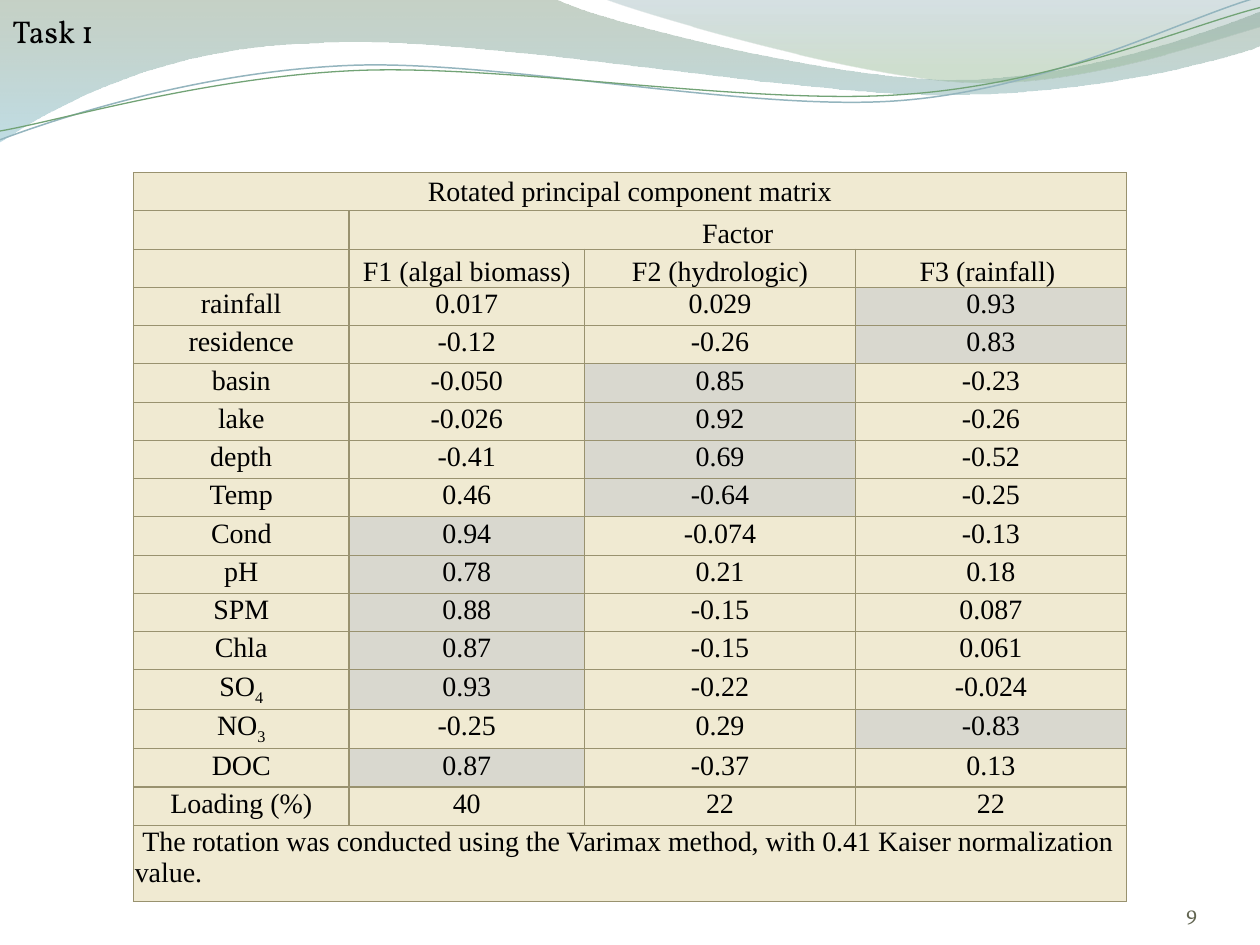
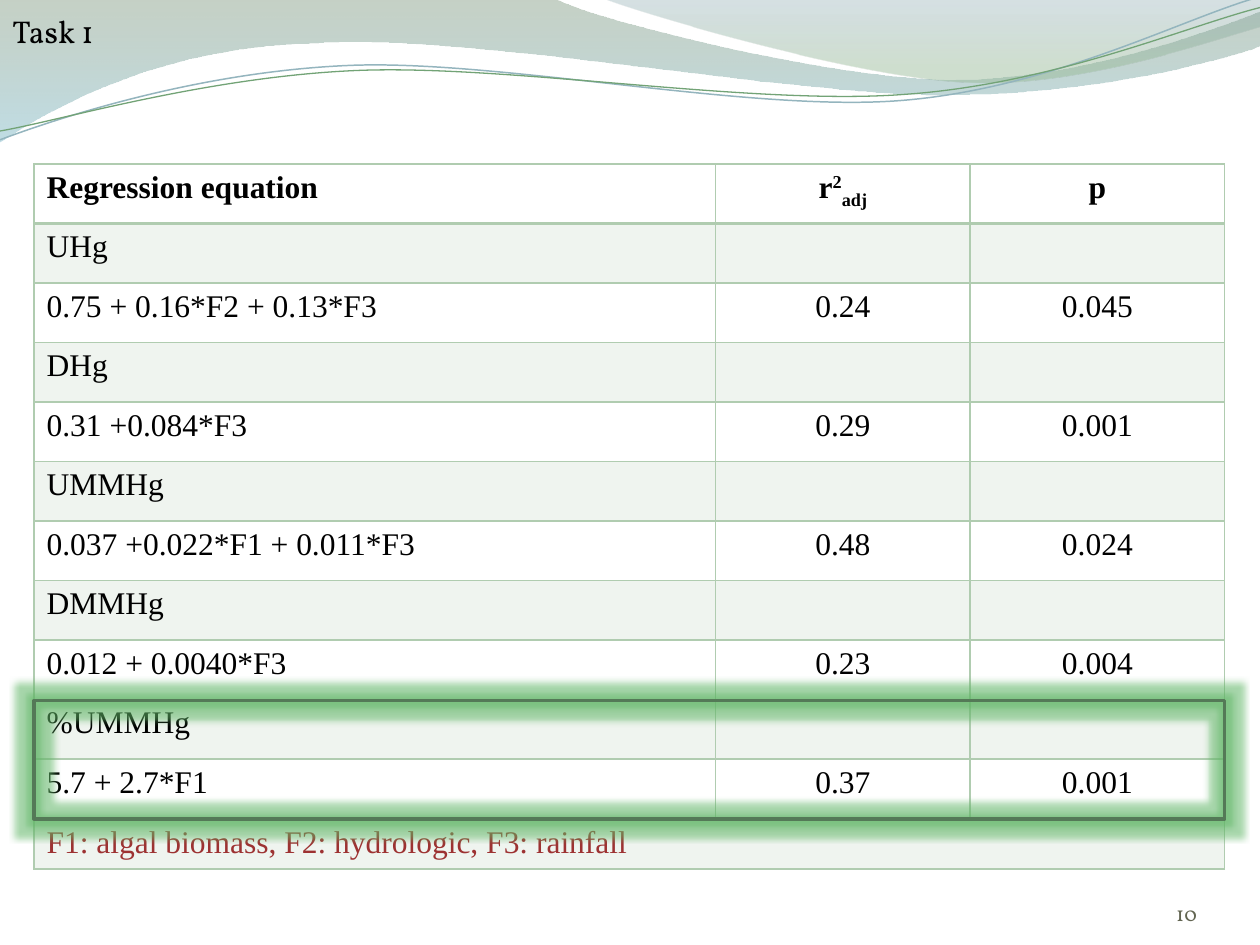
import pptx
import pptx.dml.color
import pptx.enum.shapes
import pptx.enum.text
import pptx.oxml.ns
import pptx.util
from lxml import etree

Inches = pptx.util.Inches
Pt = pptx.util.Pt
RGBColor = pptx.dml.color.RGBColor
ALIGN = pptx.enum.text.PP_ALIGN
ANCHOR = pptx.enum.text.MSO_ANCHOR
qn = pptx.oxml.ns.qn

BLACK = RGBColor(0x00, 0x00, 0x00)
NUMBER_GREY = RGBColor(0x62, 0x65, 0x51)
SAND = RGBColor(0xF0, 0xEA, 0xD2)
SAND_BORDER = RGBColor(0x99, 0x92, 0x6F)
HIGHLIGHT = RGBColor(0xD9, 0xD8, 0xCF)
MINT = RGBColor(0xB0, 0xCC, 0xB0)
NOTE_RED = RGBColor(0x9D, 0x32, 0x32)
FRAME_GREEN = RGBColor(0x54, 0x79, 0x57)
GLOW_GREEN = RGBColor(0x60, 0xB6, 0x66)
LINE_BLUE = RGBColor(0x94, 0xB5, 0xBE)
LINE_GREEN = RGBColor(0x72, 0xA3, 0x76)
SAGE = RGBColor(0x80, 0x99, 0x80)
SKY = RGBColor(0x8D, 0xC1, 0xCF)
STEEL = RGBColor(0x77, 0x9B, 0xA4)
LEAF = RGBColor(0x96, 0xB9, 0x96)

TITLE_FONT = "Vollkorn"
TABLE_FONT = "Times New Roman"
TITLE = "Task 1"

BANDS = [
    ([[(0, 0)], [(4.4, -0.01)],
      [(4.76, 0.17), (6.64, 0.63), (7.58, 0.63)],
      [(8.53, 0.63), (9.58, 0.26), (10, 0.09)], [(10.01, 0.36)],
      [(9.83, 0.44), (8.7, 0.76), (7.46, 0.75)],
      [(6.22, 0.75), (3.82, 0.28), (2.57, 0.34)],
      [(1.29, 0.36), (0.46, 0.83), (-0.01, 1.13)], [(0, 0)]],
     [(0, SAGE, 45), (1, SKY, 55)]),
    ([[(4.79, -0.01)],
      [(5.09, 0.11), (6.82, 0.62), (7.69, 0.65)],
      [(8.56, 0.69), (9.61, 0.32), (10, 0.21)], [(10, 0)], [(4.79, -0.01)]],
     [(0, STEEL, 30), (0.8, LEAF, 45)]),
]
WAVE_LINES = [
    ([[(0, 1.11)],
      [(0.48, 0.93), (1.58, 0.57), (2.77, 0.52)],
      [(3.95, 0.47), (5.93, 0.89), (7.13, 0.8)],
      [(8.33, 0.71), (9.38, 0.15), (9.98, -0.02)]], LINE_BLUE, 0.85),
    ([[(0, 1.04)],
      [(0.47, 0.96), (1.64, 0.61), (2.83, 0.56)],
      [(4.03, 0.51), (5.97, 0.84), (7.17, 0.75)],
      [(8.36, 0.67), (9.41, 0.21), (10, 0.06)]], LINE_GREEN, 0.75),
]

MATRIX_HEAD = [
    ["Rotated principal component matrix", "", "", ""],
    ["", "Factor", "", ""],
    ["", "F1 (algal biomass)", "F2 (hydrologic)", "F3 (rainfall) "],
]
LOADINGS = [
    ["rainfall", "0.017", "0.029", "0.93"],
    ["residence", "-0.12", "-0.26", "0.83"],
    ["basin", "-0.050", "0.85", "-0.23"],
    ["lake", "-0.026", "0.92", "-0.26"],
    ["depth", "-0.41", "0.69", "-0.52"],
    ["Temp", "0.46", "-0.64", "-0.25"],
    ["Cond", "0.94", "-0.074", "-0.13"],
    ["pH", "0.78", "0.21", "0.18"],
    ["SPM", "0.88", "-0.15", "0.087"],
    ["Chla", "0.87", "-0.15", "0.061"],
    [[("SO", 0), ("4", -25)], "0.93", "-0.22", "-0.024"],
    [[("NO", 0), ("3", -25)], "-0.25", "0.29", "-0.83"],
    ["DOC", "0.87", "-0.37", "0.13"],
]
MATRIX_FOOT = [
    ["Loading (%)", "40", "22", "22"],
    ["The rotation was conducted using the Varimax method, "
     "with 0.41 Kaiser normalization value.", "", "", ""],
]
STRONG_LOADING = 0.6

REGRESSION_HEAD = ["Regression equation", [("r", 0), ("2", 30), ("adj", -25)], "p"]
REGRESSIONS = [
    ("UHg", "0.75 + 0.16*F2 + 0.13*F3", "0.24", "0.045"),
    ("DHg", "0.31 +0.084*F3", "0.29", "0.001"),
    ("UMMHg", "0.037 +0.022*F1 + 0.011*F3", "0.48", "0.024"),
    ("DMMHg", "0.012 + 0.0040*F3", "0.23", "0.004"),
    ("%UMMHg", "5.7 + 2.7*F1", "0.37", "0.001"),
]
REGRESSION_NOTE = "F1: algal biomass, F2: hydrologic, F3: rainfall"


def set_alpha(color_element, percent):
    etree.SubElement(color_element, qn("a:alpha")).set("val", str(percent * 1000))


def add_outline(page, segments, close):
    ends = [tuple(map(Inches, segment[-1])) for segment in segments]
    builder = page.shapes.build_freeform(*ends[0])
    builder.add_line_segments(ends[1:], close=close)
    outline = builder.convert_to_shape()
    outline.shadow.inherit = False
    straights = list(outline._element.spPr.iter(qn("a:lnTo")))
    for straight, segment in zip(straights, segments[1:]):
        if len(segment) == 3:
            curve = etree.Element(qn("a:cubicBezTo"))
            for x, y in segment:
                point = etree.SubElement(curve, qn("a:pt"))
                point.set("x", str(Inches(x) - outline.left))
                point.set("y", str(Inches(y) - outline.top))
            straight.getparent().replace(straight, curve)
    return outline


def add_waves(page):
    for segments, stops in BANDS:
        band = add_outline(page, segments, True)
        band.line.fill.background()
        band.fill.gradient()
        band.fill.gradient_angle = 270
        for stop, (position, color, opacity) in zip(band.fill.gradient_stops, stops):
            stop.position = position
            stop.color.rgb = color
        colors = list(band._element.spPr.iter(qn("a:srgbClr")))
        for element, (position, color, opacity) in zip(colors, stops):
            set_alpha(element, opacity)
    for segments, color, width in WAVE_LINES:
        wave = add_outline(page, segments, False)
        wave.fill.background()
        wave.line.color.rgb = color
        wave.line.width = Pt(width)


def style_paragraph(para, font, size, color, align=ALIGN.LEFT, bold=False):
    para.alignment = align
    para.font.name = font
    para.font.size = Pt(size)
    para.font.color.rgb = color
    para.font.bold = bold


def add_label(page, text, place, size, color, align=ALIGN.LEFT):
    box = page.shapes.add_textbox(*map(Inches, place))
    box.text_frame.word_wrap = True
    para = box.text_frame.paragraphs[0]
    para.text = text
    style_paragraph(para, TITLE_FONT, size, color, align)
    return box.text_frame


def add_page(deck, number):
    page = deck.slides.add_slide(deck.slide_layouts[6])
    add_waves(page)
    add_label(page, TITLE, (0, 0.05, 10, 0.4), 18, BLACK)
    frame = add_label(page, str(number), (8.67, 6.95, 0.83, 0.4), 12, NUMBER_GREY, ALIGN.RIGHT)
    frame.vertical_anchor = ANCHOR.BOTTOM
    frame.margin_left = frame.margin_right = frame.margin_top = frame.margin_bottom = 0
    return page


def add_grid(page, left, top, widths, heights):
    frame = page.shapes.add_table(len(heights), len(widths), Inches(left), Inches(top),
                                  Inches(sum(widths)), Inches(sum(heights)))
    grid = frame.table
    grid.first_row = grid.horz_banding = False
    for column, width in zip(grid.columns, widths):
        column.width = Inches(width)
    for row, height in zip(grid.rows, heights):
        row.height = Inches(height)
    return grid


def write_cell(cell, content, size, align, margins, color=BLACK, bold=False):
    cell.margin_left, cell.margin_top, cell.margin_right, cell.margin_bottom = map(Inches, margins)
    para = cell.text_frame.paragraphs[0]
    style_paragraph(para, TABLE_FONT, size, color, align, bold)
    pieces = [(content, 0)] if isinstance(content, str) else content
    for text, baseline in pieces:
        if text:
            span = para.add_run()
            span.text = text
            if baseline:
                span._r.get_or_add_rPr().set("baseline", str(baseline * 1000))


def set_borders(cell, color, width, **special):
    properties = cell._tc.get_or_add_tcPr()
    for side in "LRTB":
        border = etree.SubElement(properties, qn("a:ln" + side))
        border.set("w", str(Pt(special.get(side, width))))
        fill = etree.SubElement(border, qn("a:solidFill"))
        etree.SubElement(fill, qn("a:srgbClr")).set("val", str(color))


def fill_cell(cell, color, opacity=100):
    cell.fill.solid()
    cell.fill.fore_color.rgb = color
    if opacity < 100:
        set_alpha(cell._tc.tcPr.find(qn("a:solidFill"))[0], opacity)


def add_matrix(page):
    rows = MATRIX_HEAD + LOADINGS + MATRIX_FOOT
    last = len(rows) - 1
    unit = 5.77 / (len(rows) + 1)
    grid = add_grid(page, 1.06, 1.37, [1.71, 1.87, 2.15, 2.15], [unit] * last + [2 * unit])
    for r, row in enumerate(rows):
        for c, content in enumerate(row):
            cell = grid.cell(r, c)
            align = ALIGN.LEFT if r == last else ALIGN.CENTER
            write_cell(cell, content, 16, align, (0.01, 0.01, 0.01, 0))
            if r < len(MATRIX_HEAD):
                cell.vertical_anchor = ANCHOR.BOTTOM if r else ANCHOR.MIDDLE
            set_borders(cell, SAND_BORDER, 0.75)
            strong = row in LOADINGS and c > 0 and abs(float(content)) > STRONG_LOADING
            fill_cell(cell, HIGHLIGHT if strong else SAND)
    grid.cell(0, 0).merge(grid.cell(0, 3))
    grid.cell(1, 1).merge(grid.cell(1, 3))
    grid.cell(last, 0).merge(grid.cell(last, 3))
    note = grid.cell(last, 0).text_frame.paragraphs[0]
    note._p.get_or_add_pPr().set("indent", str(Inches(0.06)))


def add_regressions(page):
    rows = [REGRESSION_HEAD]
    for name, *result in REGRESSIONS:
        rows += [[name, "", ""], result]
    rows.append([REGRESSION_NOTE, "", ""])
    last = len(rows) - 1
    grid = add_grid(page, 0.27, 1.3, [5.41, 2.02, 2.02], [5.2 / last] * last + [0.4])
    for r, row in enumerate(rows):
        for c, content in enumerate(row):
            cell = grid.cell(r, c)
            write_cell(cell, content, 18, ALIGN.CENTER if c else ALIGN.LEFT,
                       (0.1, 0.05, 0.1, 0.05), NOTE_RED if r == last else BLACK, r == 0)
            set_borders(cell, MINT, 1, **{0: {"B": 2}, 1: {"T": 2}}.get(r, {}))
            if r % 2:
                fill_cell(cell, MINT, 20)
            else:
                cell.fill.background()
    grid.cell(last, 0).merge(grid.cell(last, 2))


def add_glowing_frame(page):
    frame = page.shapes.add_shape(pptx.enum.shapes.MSO_SHAPE.RECTANGLE,
                                  *map(Inches, (0.27, 5.56, 9.45, 0.94)))
    frame.fill.background()
    frame.line.color.rgb = FRAME_GREEN
    frame.line.width = Pt(2)
    frame.shadow.inherit = False
    effects = frame._element.spPr.find(qn("a:effectLst"))
    glow = etree.SubElement(effects, qn("a:glow"))
    glow.set("rad", str(Pt(6.5)))
    color = etree.SubElement(glow, qn("a:srgbClr"))
    color.set("val", str(GLOW_GREEN))
    set_alpha(color, 55)


def main():
    deck = pptx.Presentation()
    deck.slide_width, deck.slide_height = Inches(10), Inches(7.5)
    add_matrix(add_page(deck, 9))
    page = add_page(deck, 10)
    add_regressions(page)
    add_glowing_frame(page)
    deck.save("out.pptx")


if __name__ == "__main__":
    main()
